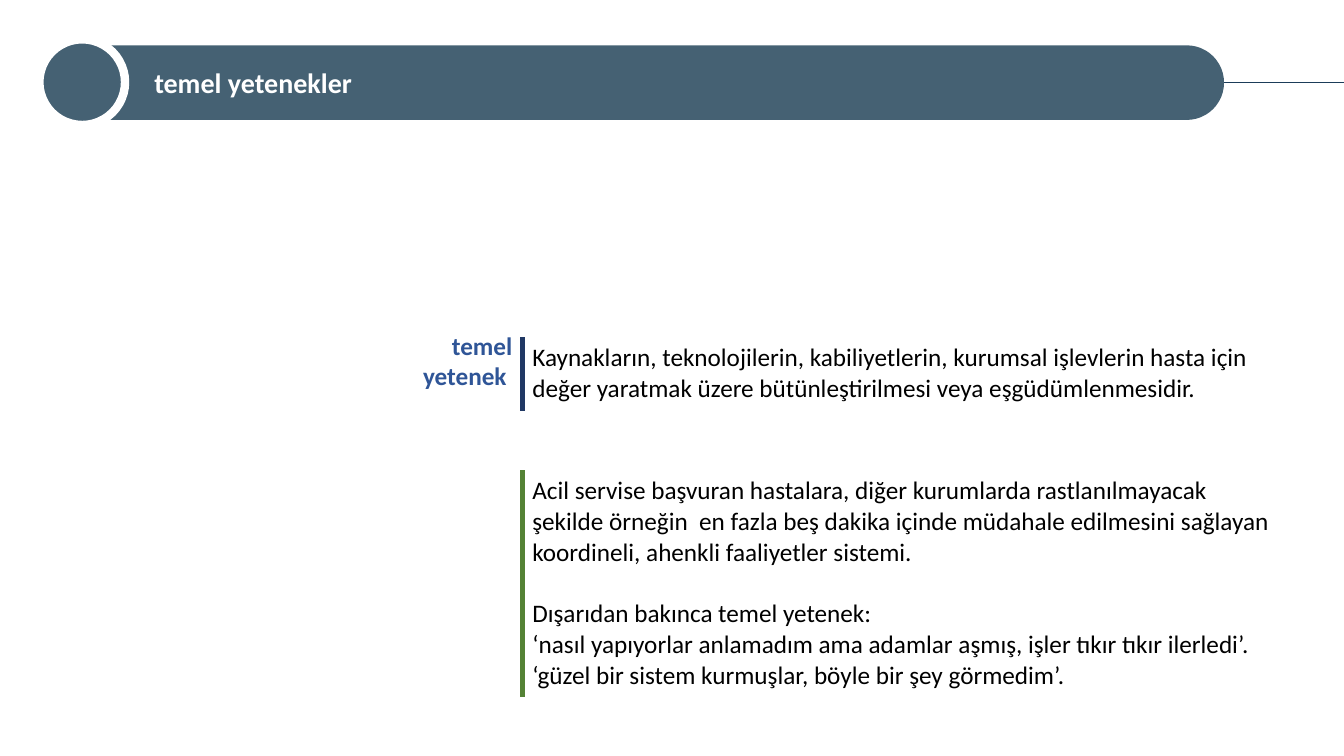
from lxml import etree
from pptx import Presentation
from pptx.dml.color import RGBColor
from pptx.enum.shapes import MSO_CONNECTOR, MSO_SHAPE
from pptx.enum.text import MSO_ANCHOR as ANCHOR, PP_ALIGN as ALIGN
from pptx.oxml.ns import qn
from pptx.util import Inches, Pt

COLORS = {"slate": "456173", "white": "FFFFFF", "black": "000000", "rule": "1B3C59",
          "navy": "203864", "green": "548235", "blue": "2F5597"}


def rgb(name):
    return RGBColor.from_string(COLORS[name])


def write(p, text, color, size=18, bold=False):
    r = p.add_run()
    r.text = text
    for key, value in {"name": "Calibri", "size": Pt(size), "bold": bold}.items():
        setattr(r.font, key, value)
    r.font.color.rgb = rgb(color)


prs = Presentation()
prs.slide_width, prs.slide_height = Inches(13.33), Inches(7.5)
s = prs.slides.add_slide(prs.slide_layouts[5])
title = s.shapes.title

bar = s.shapes.add_shape(MSO_SHAPE.ROUNDED_RECTANGLE, Inches(0.39), Inches(0.45), Inches(11.75), Inches(0.74))
bar.adjustments[0] = 0.5
bar.line.fill.background()
circle = s.shapes.add_shape(MSO_SHAPE.OVAL, Inches(0.39), Inches(0.39), Inches(0.85), Inches(0.85))
circle.line.color.rgb = rgb("white")
circle.line.width = Pt(6)
for sp in (bar, circle):
    sp.shadow.inherit = False
    sp.fill.solid()
    sp.fill.fore_color.rgb = rgb("slate")

rule = s.shapes.add_connector(MSO_CONNECTOR.STRAIGHT, Inches(12.14), Inches(0.82), Inches(13.33), Inches(0.82))
rule.line.color.rgb = rgb("rule")
rule.line.width = Pt(0.5)
etree.SubElement(rule.element.spPr, qn("a:effectLst"))

title.left, title.top, title.width, title.height = Inches(1.53), Inches(0.45), Inches(10), Inches(0.74)
tf = title.text_frame
for key, value in {"margin_left": 0, "vertical_anchor": ANCHOR.MIDDLE, "word_wrap": True}.items():
    setattr(tf, key, value)
tf.paragraphs[0].alignment = ALIGN.LEFT
write(tf.paragraphs[0], "temel yetenekler", "white", 20, True)
s.shapes._spTree.append(title.element)

definition = [
    "Kaynakların, teknolojilerin, kabiliyetlerin, kurumsal işlevlerin hasta için değer yaratmak "
    "üzere bütünleştirilmesi veya eşgüdümlenmesidir.",
]
example = [
    "Acil servise başvuran hastalara, diğer kurumlarda rastlanılmayacak şekilde örneğin  en fazla "
    "beş dakika içinde müdahale edilmesini sağlayan koordineli, ahenkli faaliyetler sistemi.",
    "Dışarıdan bakınca temel yetenek:",
    "‘nasıl yapıyorlar anlamadım ama adamlar aşmış, işler tıkır tıkır ilerledi’.",
    "‘güzel bir sistem kurmuşlar, böyle bir şey görmedim’.",
]
panels = [
    (3.35, 7.41, 0.7, definition, [("lnL", "navy", 4.5), ("lnR", "white", 1), ("lnB", "white", 3)]),
    (4.67, 7.54, 2.2, example, [("lnL", "green", 4.5)]),
]
for top, width, height, lines, borders in panels:
    table = s.shapes.add_table(1, 1, Inches(5.18), Inches(top), Inches(width), Inches(height)).table
    table.first_row = table.horz_banding = False
    cell = table.cell(0, 0)
    cell.fill.solid()
    cell.fill.fore_color.rgb = rgb("white")
    tf = cell.text_frame
    for i, line in enumerate(lines):
        p = tf.add_paragraph() if i else tf.paragraphs[0]
        if i == 1:
            p.space_before = Pt(22)
        write(p, line, "black")
    for i, (side, color, points) in enumerate(borders):
        ln = etree.Element(qn(f"a:{side}"), w=str(Pt(points)))
        fill = etree.SubElement(ln, qn("a:solidFill"))
        etree.SubElement(fill, qn("a:srgbClr"), val=COLORS[color])
        cell._tc.tcPr.insert(i, ln)

label = s.shapes.add_textbox(Inches(3.64), Inches(3.23), Inches(1.54), Inches(0.71))
tf = label.text_frame
tf.word_wrap = True
tf.paragraphs[0].alignment = ALIGN.RIGHT
write(tf.paragraphs[0], "temel yetenek ", "blue", bold=True)

prs.save("out.pptx")
